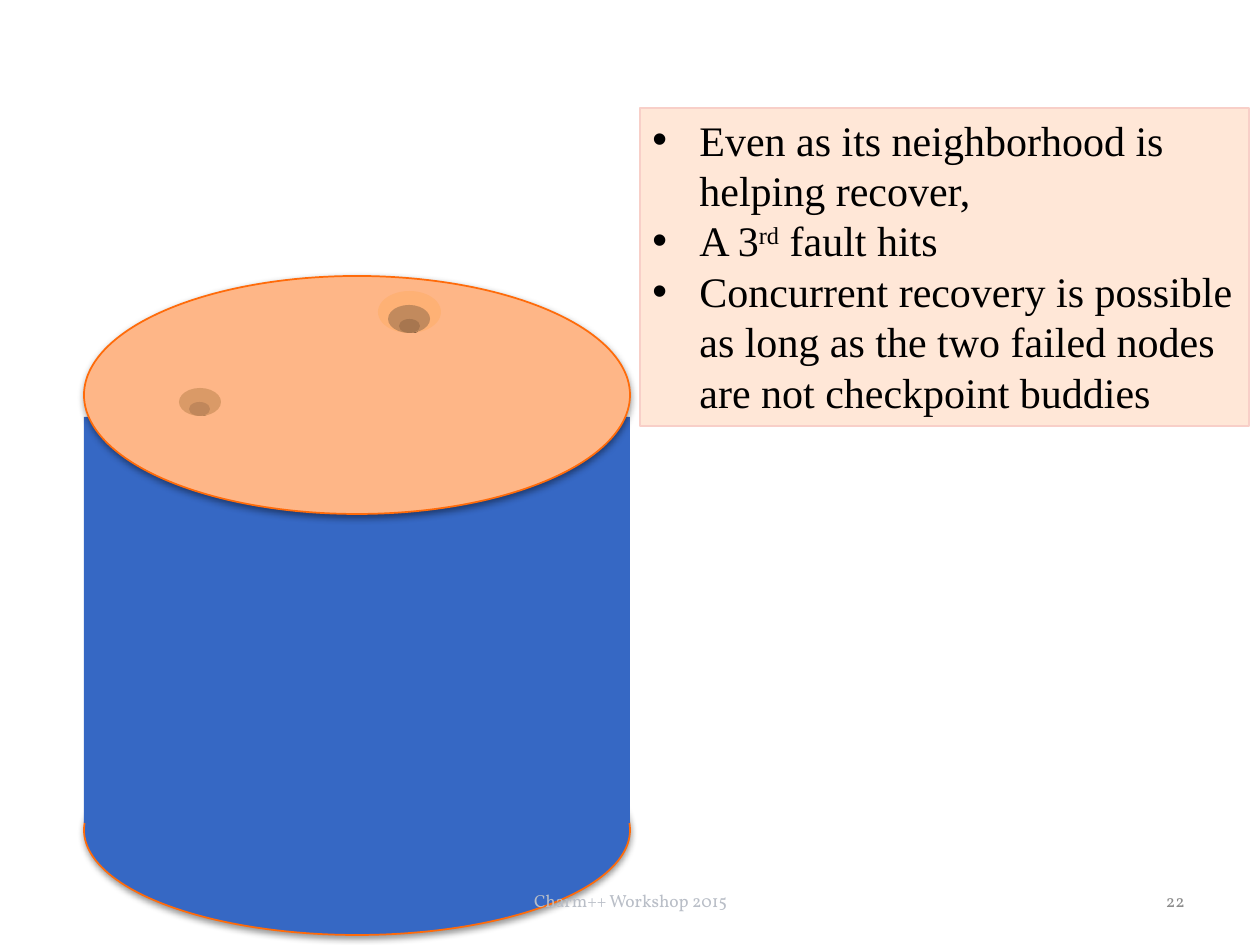
"""Build the slide on concurrent recovery after a third fault."""
from lxml import etree
from pptx import Presentation
from pptx.dml.color import RGBColor
from pptx.enum.shapes import MSO_SHAPE
from pptx.enum.text import MSO_ANCHOR, MSO_AUTO_SIZE, PP_ALIGN
from pptx.oxml import parse_xml
from pptx.oxml.ns import nsdecls, qn
from pptx.util import Emu, Pt

OVAL, RECTANGLE = MSO_SHAPE.OVAL, MSO_SHAPE.RECTANGLE
MIDDLE, GROW = MSO_ANCHOR.MIDDLE, MSO_AUTO_SIZE.SHAPE_TO_FIT_TEXT
CENTER, RIGHT = PP_ALIGN.CENTER, PP_ALIGN.RIGHT
SCALE = 914400 / 126


def px(length):
    """Turn pixels into EMU."""
    return Emu(round(length * SCALE))


def color(value):
    """Turn a hex string into a colour."""
    return RGBColor.from_string(value)


class Painter:
    """Hold the style and the current slide."""

    body_font, footer_font = "Times New Roman", "Vollkorn"
    body_size, footer_size = Pt(24), Pt(10)
    rim, blue = "FF6B0A", "3668C4"

    def __init__(self, deck):
        """Add an empty slide to the deck."""
        self.slide = deck.slides.add_slide(deck.slide_layouts[6])

    def shape(self, kind, frame, fill, line=None, width=1, parent=None):
        """Add a filled shape without shadow."""
        shapes = (parent or self.slide).shapes
        shape = shapes.add_shape(kind, *map(px, frame))
        shape.shadow.inherit = False
        shape.fill.solid()
        shape.fill.fore_color.rgb = color(fill)
        if line:
            shape.line.color.rgb = color(line)
            shape.line.width = Pt(width)
        else:
            shape.line.fill.background()
        return shape

    def disc(self, frame, fill):
        """Add a rimmed oval with a soft shadow below."""
        disc = self.shape(OVAL, frame, fill, self.rim)
        effects = disc.element.spPr.find(qn("a:effectLst"))
        effects.append(parse_xml(
            f'<a:outerShdw {nsdecls("a")} blurRad="50800" dist="20320" dir="5400000" '
            'rotWithShape="0"><a:srgbClr val="000000"><a:alpha val="42000"/>'
            '</a:srgbClr></a:outerShdw>'))

    def crater(self, ovals):
        """Group the nested ovals of one fault."""
        group = self.slide.shapes.add_group_shape()
        for frame, fill in ovals:
            self.shape(OVAL, frame, fill, parent=group)

    def span(self, para, text, font, size, ink):
        """Add one styled run."""
        span = para.add_run()
        span.text = text
        span.font.name, span.font.size = font, size
        span.font.color.rgb = color(ink)
        return span

    def bullets(self, frame, items):
        """Add a tinted box with bulleted paragraphs."""
        box = self.shape(RECTANGLE, frame, "FFE7D7", "F8CFC8", 0.75)
        text = box.text_frame
        text.word_wrap, text.auto_size = True, GROW
        text.vertical_anchor = MSO_ANCHOR.TOP
        for index, pieces in enumerate(items):
            para = text.add_paragraph() if index else text.paragraphs[0]
            para.alignment = PP_ALIGN.LEFT
            para.line_spacing = Pt(28.8)
            properties = para._p.get_or_add_pPr()
            properties.set("marL", str(px(47)))
            properties.set("indent", str(-px(47)))
            etree.SubElement(properties, qn("a:buFont")).set("typeface", "Arial")
            etree.SubElement(properties, qn("a:buChar")).set("char", "•")
            for piece, raised in pieces:
                span = self.span(para, piece, self.body_font, self.body_size, "000000")
                if raised:
                    span.font._element.set("baseline", "30000")

    def footer(self, frame, words, align, ink):
        """Add a small line at the foot of the slide."""
        text = self.slide.shapes.add_textbox(*map(px, frame)).text_frame
        text.word_wrap, text.vertical_anchor = True, MIDDLE
        para = text.paragraphs[0]
        para.alignment = align
        self.span(para, words, self.footer_font, self.footer_size, ink)


def main():
    """Draw the slide and save the deck."""
    deck = Presentation()
    deck.slide_width, deck.slide_height = px(1260), px(945)
    painter = Painter(deck)
    painter.disc((84, 725, 546, 210), painter.blue)
    painter.shape(RECTANGLE, (84, 417, 546, 406), painter.blue)
    painter.footer((903, 876, 294, 50), "22", RIGHT, "8C8C8C")
    painter.disc((84, 276, 546, 238), "FEB687")
    painter.crater([
        ((378, 291, 63, 42), "FEB175"),
        ((410, 319, 10, 14), "755337"),
        ((388, 305, 42, 28), "C28A5D"),
        ((399, 319, 21, 14), "A7764F"),
    ])
    painter.crater([
        ((199, 402, 10, 14), "755337"),
        ((179, 388, 42, 28), "DA9A67"),
        ((189, 402, 21, 14), "C0875B"),
    ])
    painter.bullets((640, 108, 609, 318), [
        [("Even as its neighborhood is helping recover,", False)],
        [("A 3", False), ("rd", True), (" fault hits", False)],
        [("Concurrent recovery is possible as long as the two failed nodes "
          "are not checkpoint buddies", False)],
    ])
    painter.footer((431, 876, 399, 50), "Charm++ Workshop 2015", CENTER, "B9BEC7")
    deck.save("out.pptx")


if __name__ == "__main__":
    main()
